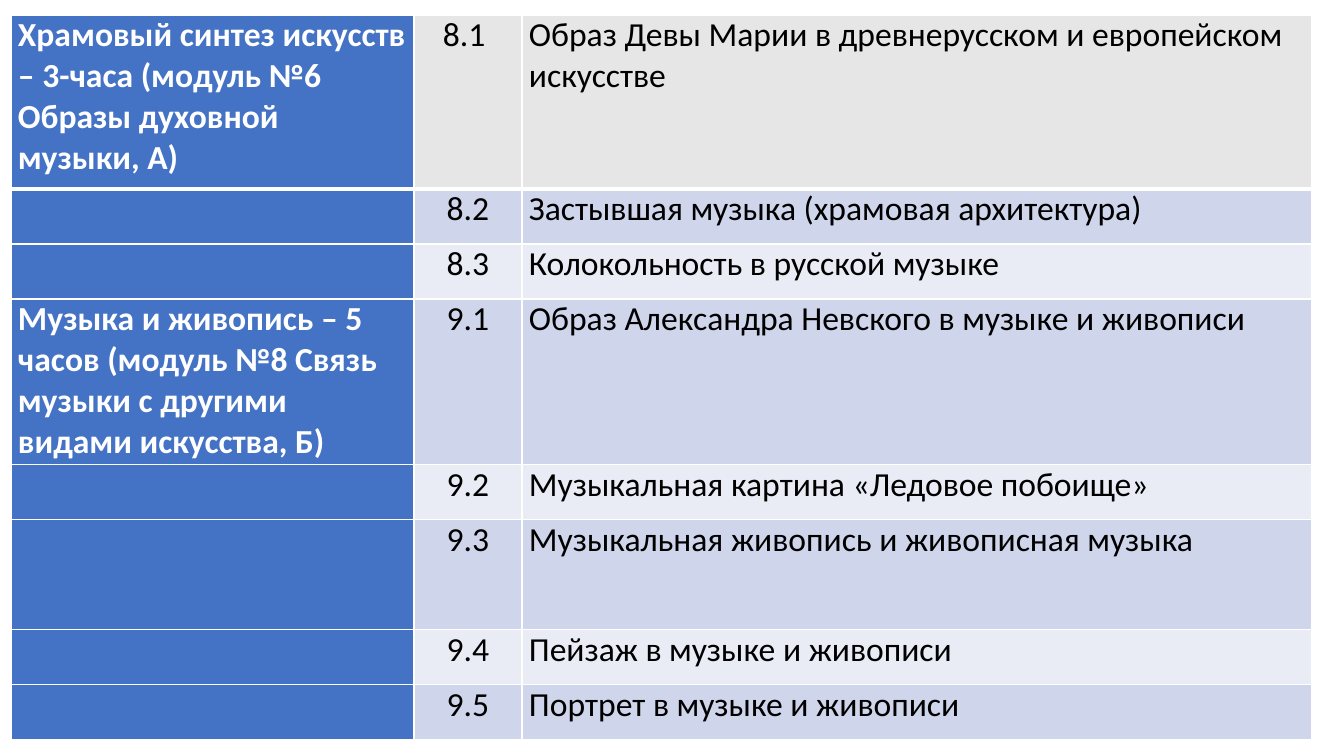
"""Build a slide with a table of lesson topics by module."""
from lxml import etree
from pptx import Presentation
from pptx.dml.color import RGBColor
from pptx.enum import text
from pptx.oxml import ns
from pptx.util import Pt

ROWS = [
    ("Храмовый синтез искусств – 3-часа (модуль №6 Образы духовной музыки, А)",
     "8.1 ", "Образ Девы Марии в древнерусском и европейском искусстве"),
    ("", "8.2", "Застывшая музыка (храмовая архитектура)"),
    ("", "8.3", "Колокольность в русской музыке"),
    ("Музыка и живопись – 5 часов (модуль №8 Связь музыки с другими видами искусства, Б)",
     "9.1", "Образ Александра Невского в музыке и живописи"),
    ("", "9.2", "Музыкальная картина «Ледовое побоище»"),
    ("", "9.3", "Музыкальная живопись и живописная музыка"),
    ("", "9.4", "Пейзаж в музыке и живописи"),
    ("", "9.5", "Портрет в музыке и живописи"),
]
COLS = [403, 108, 790]
HIGHS = [174, 55, 55, 166, 55, 110, 55, 55]
LEFT, TOP = 11, 15
WIDE, HIGH = 1344, 756
SCALE = 12192000 / WIDE

WHITE = RGBColor(0xFF, 0xFF, 0xFF)
BLACK = RGBColor(0, 0, 0)
BLUE = RGBColor(0x44, 0x72, 0xC4)
GREY = RGBColor(0xE7, 0xE6, 0xE6)
BANDS = [RGBColor(0xE9, 0xEB, 0xF5), RGBColor(0xCF, 0xD5, 0xEA)]
INSETS = {"margin_left": 7, "margin_right": 7, "margin_top": 0, "margin_bottom": 0}
FONT = {"name": "Calibri", "size": Pt(24)}
ALIGN = [text.PP_ALIGN.LEFT, text.PP_ALIGN.CENTER, text.PP_ALIGN.LEFT]


def px(n):
    """Turn pixels into EMU."""
    return round(n * SCALE)


def edge(cell, row):
    """Draw white borders, thick below the first row."""
    thick = {"T": row == 1, "B": row == 0}
    for side in "LRTB":
        width = Pt(3 if thick.get(side) else 1)
        line = etree.SubElement(cell._tc.get_or_add_tcPr(), ns.qn("a:ln" + side), w=str(width))
        fill = etree.SubElement(line, ns.qn("a:solidFill"))
        etree.SubElement(fill, ns.qn("a:srgbClr"), val=str(WHITE))


def dress(cell, words, row, col):
    """Fill one cell and set its text."""
    edge(cell, row)
    cell.fill.solid()
    cell.fill.fore_color.rgb = BLUE if col == 0 else GREY if row == 0 else BANDS[row % 2]
    for key, val in INSETS.items():
        setattr(cell, key, px(val))
    if not words:
        return
    para = cell.text_frame.paragraphs[0]
    para.alignment = ALIGN[col]
    run = para.add_run()
    run.text = words
    for key, val in FONT.items():
        setattr(run.font, key, val)
    run.font.bold = col == 0
    run.font.color.rgb = WHITE if col == 0 else BLACK


def main():
    """Lay out the table and save the slide."""
    deck = Presentation()
    deck.slide_width, deck.slide_height = px(WIDE), px(HIGH)
    slide = deck.slides.add_slide(deck.slide_layouts[6])
    box = (LEFT, TOP, sum(COLS), sum(HIGHS))
    table = slide.shapes.add_table(len(ROWS), len(COLS), *map(px, box)).table
    table.first_row = table.horz_banding = False
    for col, wide in zip(table.columns, COLS):
        col.width = px(wide)
    for r, (row, high) in enumerate(zip(ROWS, HIGHS)):
        table.rows[r].height = px(high)
        for c, words in enumerate(row):
            dress(table.cell(r, c), words, r, c)
    deck.save("out.pptx")


if __name__ == "__main__":
    main()
